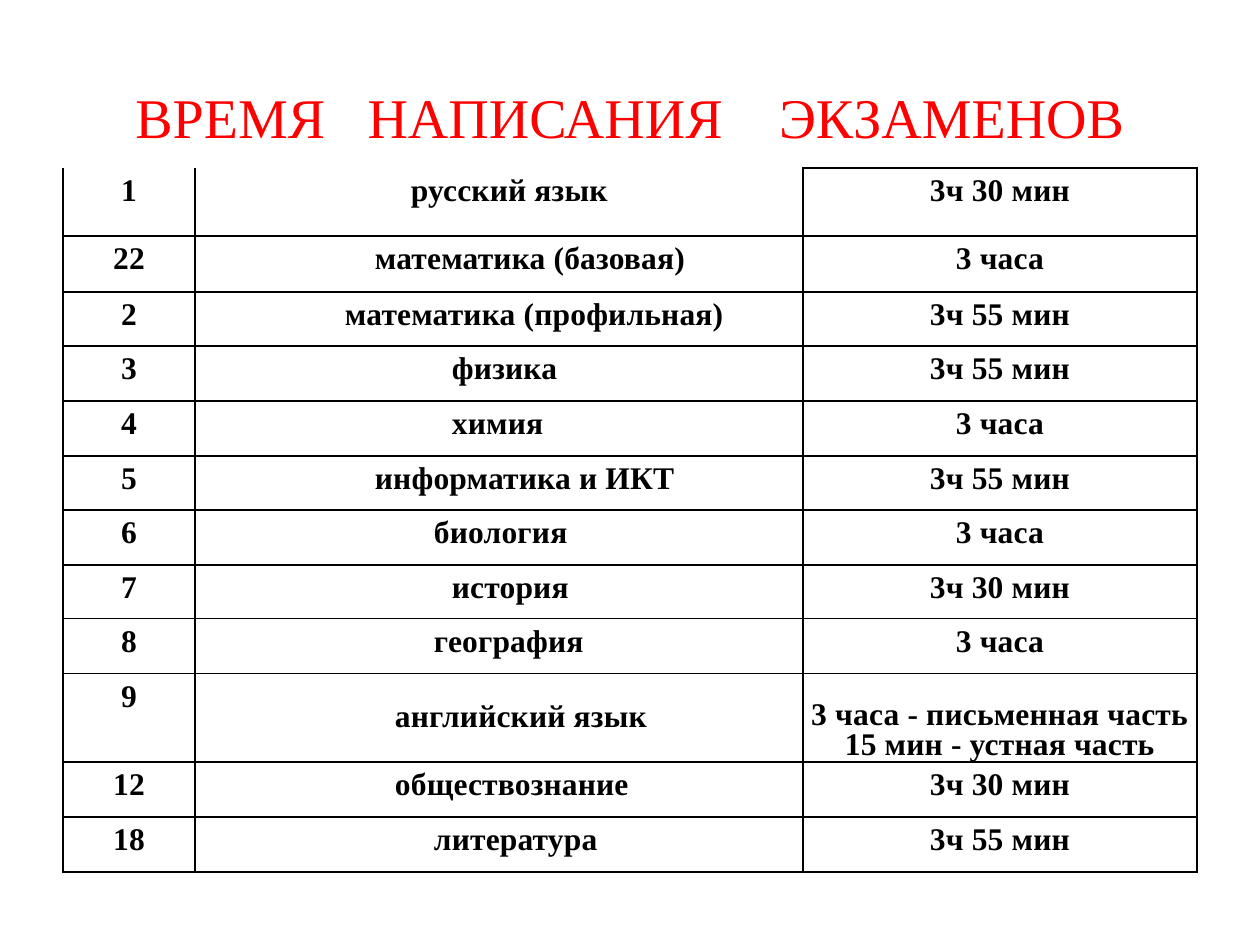
from lxml.etree import SubElement as Sub
from pptx import Presentation as Deck
from pptx.dml.color import RGBColor as Rgb
from pptx.enum.text import MSO_ANCHOR as Anchor, PP_ALIGN as Align
from pptx.oxml.ns import qn
from pptx.util import Pt

RED = Rgb(255, 0, 0)
BLACK = Rgb(0, 0, 0)
WHITE = Rgb(255, 255, 255)

TITLE = (("ВРЕМЯ", 0), (" ", 16), ("НАПИСАНИЯ", 0), (" ", 24), ("ЭКЗАМЕНОВ", 0))
COLS = (132, 608, 394)
LINE = 11.5
TALL = 16.8
EXAMS = (
    ("1", "русский язык", 215, "3ч 30 мин", 68),
    ("22", "математика (базовая)", 179, "3 часа", 56),
    ("2", "математика (профильная)", 149, "3ч 55 мин", 54),
    ("3", "физика", 256, "3ч 55 мин", 55),
    ("4", "химия", 256, "3 часа", 55),
    ("5", "информатика и ИКТ", 179, "3ч 55 мин", 54),
    ("6", "биология", 238, "3 часа", 55),
    ("7", "история", 256, "3ч 30 мин", 54),
    ("8", "география", 238, "3 часа", 55),
    ("9", "английский язык", 199, "3 часа - письменная часть 15 мин - устная часть", 88),
    ("12", "обществознание", 199, "3ч 30 мин", 55),
    ("18", "литература", 238, "3ч 55 мин", 55),
)


def px(num):
    """Turn px into EMU."""
    return round(num * 914400 / 126)


class Page:
    """Style and current slide."""

    font = "Times New Roman"

    def __init__(self, deck):
        """Add a blank slide."""
        self.slide = deck.slides.add_slide(deck.slide_layouts[6])

    def run(self, para, text, size, color, bold=False, gap=0):
        """Add one styled run."""
        run = para.add_run()
        run.text = text
        font = run.font
        font.name, font.size, font.bold = self.font, Pt(size), bold
        font.color.rgb = color
        if gap:
            run._r.get_or_add_rPr().set("spc", str(round(gap * 100)))

    def title(self, parts, *box):
        """Add the heading."""
        frame = self.slide.shapes.add_textbox(*map(px, box)).text_frame
        frame.word_wrap = True
        frame.vertical_anchor = Anchor.MIDDLE
        para = frame.paragraphs[0]
        para.alignment = Align.CENTER
        for text, gap in parts:
            self.run(para, text, 32, RED, gap=gap)

    def grid(self, left, top, cols, highs):
        """Add an unstyled table."""
        box = map(px, (left, top, sum(cols), sum(highs)))
        table = self.slide.shapes.add_table(len(highs), len(cols), *box).table
        table.first_row = table.horz_banding = False
        for col, wide in zip(table.columns, cols):
            col.width = px(wide)
        for row, high in zip(table.rows, highs):
            row.height = px(high)
        return table

    def edge(self, cell, side, shown):
        """Draw or hide one cell border."""
        line = Sub(cell._tc.get_or_add_tcPr(), qn(f"a:ln{side}"), w=str(Pt(1)))
        if shown:
            fill = Sub(line, qn("a:solidFill"))
            Sub(fill, qn("a:srgbClr"), val=str(BLACK))
        else:
            Sub(line, qn("a:noFill"))

    def cell(self, cell, text, skip=1, pitch=LINE, dent=0, open_top=False):
        """Fill a cell with text placed some lines down."""
        for side in "LRTB":
            self.edge(cell, side, not (open_top and side == "T"))
        cell.fill.solid()
        cell.fill.fore_color.rgb = WHITE
        cell.margin_left = cell.margin_right = px(1)
        cell.margin_top, cell.margin_bottom = Pt(skip * pitch), 0
        para = cell.text_frame.paragraphs[0]
        para.line_spacing = Pt(pitch)
        if dent:
            para.alignment = Align.LEFT
            para._p.get_or_add_pPr().set("marL", str(px(dent)))
        else:
            para.alignment = Align.CENTER
        self.run(para, text, 18, BLACK, True, 0.1)


def main():
    """Build the exam time slide."""
    deck = Deck()
    deck.slide_width, deck.slide_height = px(1260), px(945)
    page = Page(deck)
    page.title(TITLE, 63, 38, 1134, 157)
    table = page.grid(63, 168, COLS, [exam[-1] for exam in EXAMS])
    for row, (num, name, dent, time, high) in enumerate(EXAMS):
        first, tall = row == 0, high > 80
        page.cell(table.cell(row, 0), num, open_top=first)
        page.cell(table.cell(row, 1), name, 2 if tall else 1, dent=dent, open_top=first)
        page.cell(table.cell(row, 2), time, pitch=TALL if tall else LINE)
    deck.save("out.pptx")


if __name__ == "__main__":
    main()
